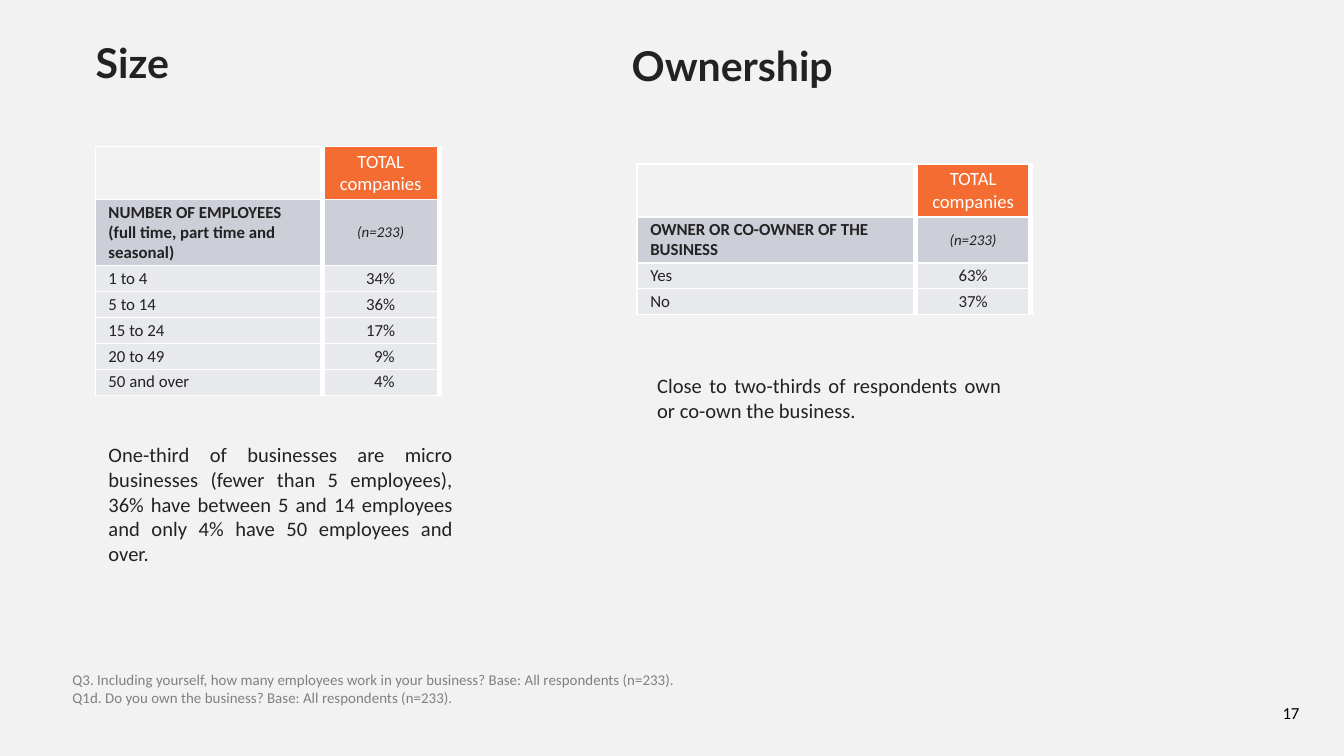
import pptx
import pptx.util
import pptx.dml.color
import pptx.enum.text
import pptx.oxml
import pptx.oxml.ns
from dataclasses import dataclass

Cm = pptx.util.Cm
Pt = pptx.util.Pt
RGB = pptx.dml.color.RGBColor.from_string
Align = pptx.enum.text.PP_ALIGN
Anchor = pptx.enum.text.MSO_ANCHOR


@dataclass(frozen=True)
class Theme:
    background: str = "F2F2F2"
    ink: str = "222223"
    black: str = "000000"
    grey: str = "808080"
    white: str = "FFFFFF"
    orange: str = "F46C31"
    band: str = "CCCFD7"
    row: str = "E7E9EC"
    heading_font: str = "Lato"
    body_font: str = "Calibri"
    heading_size: int = 22
    body_size: int = 11
    header_size: int = 10
    cell_size: int = 9
    note_size: int = 8


theme = Theme()


def style(frame, size, color, font=theme.body_font, align=Align.LEFT, bold=False, italic=False):
    for paragraph in frame.paragraphs:
        paragraph.alignment = align
        for run in paragraph.runs:
            run.font.name = font
            run.font.size = Pt(size)
            run.font.bold = bold
            run.font.italic = italic
            run.font.color.rgb = RGB(color)


def add_text(box, text, insets=(0.25, 0.13), anchor=Anchor.TOP, **look):
    frame = slide.shapes.add_textbox(*map(Cm, box)).text_frame
    frame.word_wrap = True
    frame.vertical_anchor = anchor
    frame.margin_left = frame.margin_right = Cm(insets[0])
    frame.margin_top = frame.margin_bottom = Cm(insets[1])
    frame.text = text
    style(frame, **look)
    return frame


deck = pptx.Presentation()
deck.slide_width = Cm(25.4)
deck.slide_height = Cm(14.29)
slide = deck.slides.add_slide(deck.slide_layouts[6])
slide.background.fill.solid()
slide.background.fill.fore_color.rgb = RGB(theme.background)

add_text((23.75, 13.03, 1.3, 0.76), "17", anchor=Anchor.BOTTOM,
         size=theme.cell_size, color=theme.black, align=Align.CENTER)
add_text((1.12, 12.55, 20.52, 0.94),
         "Q3. Including yourself, how many employees work in your business? Base: All respondents (n=233).\n"
         "Q1d. Do you own the business? Base: All respondents (n=233).",
         size=theme.note_size, color=theme.grey)

topics = [
    dict(heading="Size", heading_box=(1.63, 0.58, 8.28, 1.32),
         corner=(1.8, 2.77), columns=(4.29, 2.21), question_height=1.25,
         question="NUMBER OF EMPLOYEES (full time, part time and seasonal)",
         answers=[("1 to 4", "34%"), ("5 to 14", "36%"), ("15 to 24", "17%"),
                  ("20 to 49", "9%"), ("50 and over", "4%")],
         comment="One-third of businesses are micro businesses (fewer than 5 employees), "
                 "36% have between 5 and 14 employees and only 4% have 50 employees and over.",
         comment_box=(1.8, 8.36, 7.01, 2.36)),
    dict(heading="Ownership", heading_box=(11.76, 0.84, 8.28, 0.91),
         corner=(12.04, 3.1), columns=(5.26, 2.18), question_height=0.87,
         question="OWNER OR CO-OWNER OF THE BUSINESS",
         answers=[("Yes", "63%"), ("No", "37%")],
         comment="Close to two-thirds of respondents own or co-own the business.",
         comment_box=(12.17, 7.06, 7.01, 0.94)),
]

for topic in topics:
    heading = add_text(topic["heading_box"], topic["heading"], (0.18, 0.1), Anchor.MIDDLE,
                       size=theme.heading_size, color=theme.ink, font=theme.heading_font, bold=True)
    heading.paragraphs[0].line_spacing = 0.9

    rows = [("", "TOTAL\ncompanies"), (topic["question"], "(n=233)")] + topic["answers"]
    heights = [1.0, topic["question_height"]] + [0.49] * len(topic["answers"])
    results = slide.shapes.add_table(
        len(rows), 2, *map(Cm, topic["corner"]), Cm(sum(topic["columns"])), Cm(sum(heights))).table
    results.first_row = False
    results.horz_banding = False
    for column, width in zip(results.columns, topic["columns"]):
        column.width = Cm(width)

    for r, (texts, height) in enumerate(zip(rows, heights)):
        results.rows[r].height = Cm(height)
        for c, text in enumerate(texts):
            cell = results.cell(r, c)
            cell.vertical_anchor = Anchor.MIDDLE
            cell.margin_left = cell.margin_right = Cm(0.25)
            cell.margin_top = cell.margin_bottom = Cm(0.05)
            cell.text = text
            align = Align.CENTER if c else Align.LEFT
            if r == 0:
                fill = theme.orange if c else None
                style(cell.text_frame, theme.header_size, theme.white, align=align)
            elif r == 1:
                fill = theme.band
                style(cell.text_frame, theme.note_size if c else theme.cell_size, theme.ink,
                      align=align, bold=c == 0, italic=c == 1)
            else:
                fill = theme.row
                style(cell.text_frame, theme.cell_size, theme.ink, align=align)
                if c and len(text) == 2:
                    indent = cell.text_frame.paragraphs[0]._p.get_or_add_pPr()
                    indent.set("marL", str(Pt(4)))

            borders = {"lnL": 3 if c else 0.75, "lnR": 3, "lnT": 0.75, "lnB": 0.75}
            for side, weight in borders.items():
                cell._tc.get_or_add_tcPr().append(pptx.oxml.parse_xml(
                    f'<a:{side} {pptx.oxml.ns.nsdecls("a")} w="{Pt(weight)}"><a:solidFill>'
                    f'<a:srgbClr val="{theme.white}"/></a:solidFill></a:{side}>'))
            if fill:
                cell.fill.solid()
                cell.fill.fore_color.rgb = RGB(fill)
            else:
                cell.fill.background()

    add_text(topic["comment_box"], topic["comment"], (0.25, 0),
             size=theme.body_size, color=theme.ink, align=Align.JUSTIFY)

deck.save("out.pptx")
